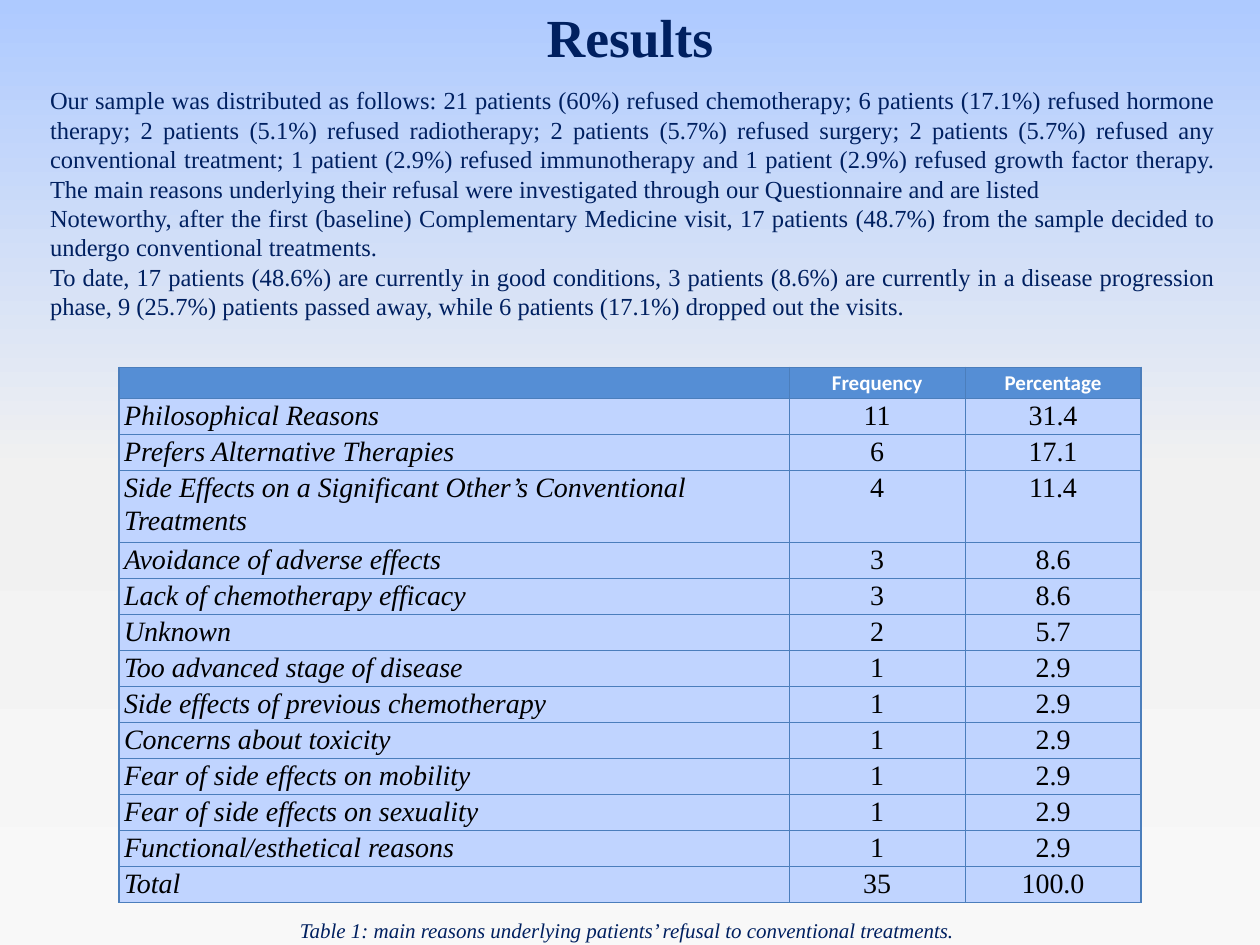
from copy import deepcopy

from pptx import Presentation
from pptx.dml.color import RGBColor
from pptx.enum import text as t
from pptx.oxml import parse_xml
from pptx.oxml.ns import nsdecls
from pptx.util import Pt

NAVY = RGBColor(0x00, 0x20, 0x60)
BLACK = RGBColor(0x00, 0x00, 0x00)
WHITE = RGBColor(0xFF, 0xFF, 0xFF)
HEADER_BLUE = RGBColor(0x55, 0x8E, 0xD5)
CELL_BLUE = RGBColor(0xC0, 0xD4, 0xFF)
BORDER_BLUE = RGBColor(0x4B, 0x7E, 0xBC)
BACKGROUND = [(0, RGBColor(0xAE, 0xCA, 0xFF)),
              (0.5, RGBColor(0xF1, 0xF1, 0xF1)),
              (1, RGBColor(0xF8, 0xF8, 0xF8))]
SERIF = "Times New Roman"
SANS = "Calibri"

FINDINGS = [
    "Our sample was distributed as follows: 21 patients (60%) refused chemotherapy; "
    "6 patients (17.1%) refused hormone therapy; 2 patients (5.1%) refused radiotherapy; "
    "2 patients (5.7%) refused surgery; 2 patients (5.7%) refused any conventional "
    "treatment; 1 patient (2.9%) refused immunotherapy and 1 patient (2.9%) refused "
    "growth factor therapy. The main reasons underlying their refusal were investigated "
    "through our Questionnaire and are listed",
    "Noteworthy, after the first (baseline) Complementary Medicine visit, 17 patients "
    "(48.7%) from the sample decided to undergo conventional treatments.",
    "To date, 17 patients (48.6%) are currently in good conditions, 3 patients (8.6%) are "
    "currently in a disease progression phase, 9 (25.7%) patients passed away, while "
    "6 patients (17.1%) dropped out the visits.",
]
REASONS = [
    ("", "Frequency", "Percentage"),
    ("Philosophical Reasons", "11", "31.4"),
    ("Prefers Alternative Therapies", "6", "17.1"),
    ("Side Effects on a Significant Other’s Conventional Treatments", "4", "11.4"),
    ("Avoidance of adverse effects", "3", "8.6"),
    ("Lack of chemotherapy efficacy", "3", "8.6"),
    ("Unknown", "2", "5.7"),
    ("Too advanced stage of disease", "1", "2.9"),
    ("Side effects of previous chemotherapy", "1", "2.9"),
    ("Concerns about toxicity", "1", "2.9"),
    ("Fear of side effects on mobility", "1", "2.9"),
    ("Fear of side effects on sexuality", "1", "2.9"),
    ("Functional/esthetical reasons", "1", "2.9"),
    ("Total", "35", "100.0"),
]


def set_background(slide):
    fill = slide.background.fill
    fill.gradient()
    fill.gradient_angle = 270
    stops = fill.gradient_stops
    last_stop = stops[len(stops) - 1]._gs
    for _ in range(len(BACKGROUND) - len(stops)):
        last_stop.addnext(deepcopy(last_stop))
    for stop, (position, color) in zip(fill.gradient_stops, BACKGROUND):
        stop.position = position
        stop.color.rgb = color


def format_paragraph(paragraph, size, color, name=SERIF, bold=False, italic=False,
                     align=t.PP_ALIGN.CENTER):
    paragraph.alignment = align
    for run in paragraph.runs:
        font = run.font
        font.name, font.size, font.bold, font.italic = name, Pt(size), bold, italic
        font.color.rgb = color


def set_indent(paragraph, left):
    properties = paragraph._p.get_or_add_pPr()
    properties.set("marL", str(Pt(left)))
    properties.set("indent", "0")


def add_title(slide, content):
    title = slide.shapes.title
    title.left, title.top, title.width, title.height = Pt(0), Pt(-2), Pt(720), Pt(45)
    frame = title.text_frame
    frame.text = content
    frame.vertical_anchor = t.MSO_ANCHOR.MIDDLE
    format_paragraph(frame.paragraphs[0], 30.6, NAVY, bold=True)


def add_text(slide, left, top, width, height, lines):
    frame = slide.shapes.add_textbox(Pt(left), Pt(top), Pt(width), Pt(height)).text_frame
    frame.word_wrap = True
    frame.text = "\n".join(lines)
    return frame


def add_findings(slide):
    frame = add_text(slide, -14.2, 43, 720, 147, FINDINGS)
    frame.margin_left = frame.margin_right = Pt(10.8)
    frame.margin_top = frame.margin_bottom = Pt(5.8)
    for paragraph in frame.paragraphs:
        set_indent(paragraph, 32)
        format_paragraph(paragraph, 14, NAVY, align=t.PP_ALIGN.JUSTIFY)


def set_borders(cell):
    properties = cell._tc.get_or_add_tcPr()
    for index, side in enumerate(("lnL", "lnR", "lnT", "lnB")):
        properties.insert(index, parse_xml(
            f'<a:{side} {nsdecls("a")} w="{Pt(0.75)}"><a:solidFill>'
            f'<a:srgbClr val="{BORDER_BLUE}"/></a:solidFill></a:{side}>'))


def fill_cell(cell, content, is_header, is_label):
    cell.margin_left = cell.margin_right = cell.margin_top = cell.margin_bottom = 0
    cell.fill.solid()
    cell.fill.fore_color.rgb = HEADER_BLUE if is_header else CELL_BLUE
    set_borders(cell)
    cell.text_frame.text = content
    paragraph = cell.text_frame.paragraphs[0]
    if is_label:
        set_indent(paragraph, 2.9)
    # Tight enough for all rows to end above the caption
    paragraph.line_spacing = 1.07
    if is_header:
        cell.vertical_anchor = t.MSO_ANCHOR.MIDDLE
        format_paragraph(paragraph, 12, WHITE, SANS, bold=True)
        if not content:
            paragraph.font.size = Pt(12)
    else:
        align = t.PP_ALIGN.LEFT if is_label else t.PP_ALIGN.CENTER
        format_paragraph(paragraph, 16, BLACK, italic=is_label, align=align)


def add_reasons_table(slide):
    widths = (383, 100.5, 100.5)
    row_height = 18
    table = slide.shapes.add_table(len(REASONS), len(widths), Pt(68), Pt(209.8),
                                   Pt(sum(widths)), Pt(row_height * len(REASONS))).table
    for column, width in zip(table.columns, widths):
        column.width = Pt(width)
    for row_index, (row, values) in enumerate(zip(table.rows, REASONS)):
        row.height = Pt(row_height)
        for column_index, (cell, value) in enumerate(zip(row.cells, values)):
            fill_cell(cell, value, row_index == 0, column_index == 0)


def add_caption(slide):
    frame = add_text(slide, 0, 520.5, 720, 21.8, [
        "Table 1: main reasons underlying patients’ refusal to conventional treatments. "])
    format_paragraph(frame.paragraphs[0], 12, NAVY, italic=True)


def main():
    presentation = Presentation()
    presentation.slide_width, presentation.slide_height = Pt(720), Pt(540)
    slide = presentation.slides.add_slide(presentation.slide_layouts[5])
    set_background(slide)
    # Heading and findings
    add_title(slide, "Results")
    add_findings(slide)
    # Table of reasons with its caption
    add_reasons_table(slide)
    add_caption(slide)
    presentation.save("out.pptx")


if __name__ == "__main__":
    main()
